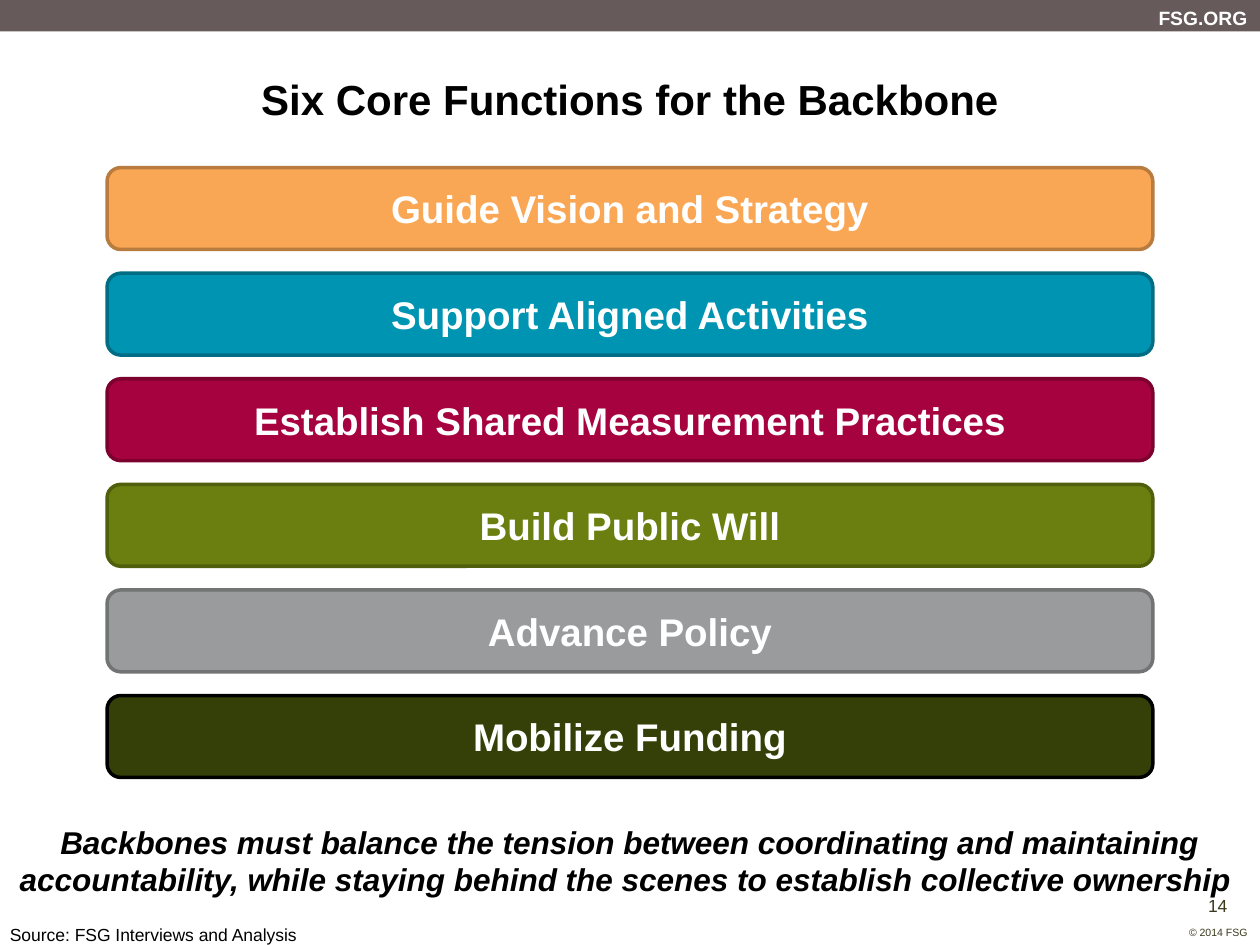
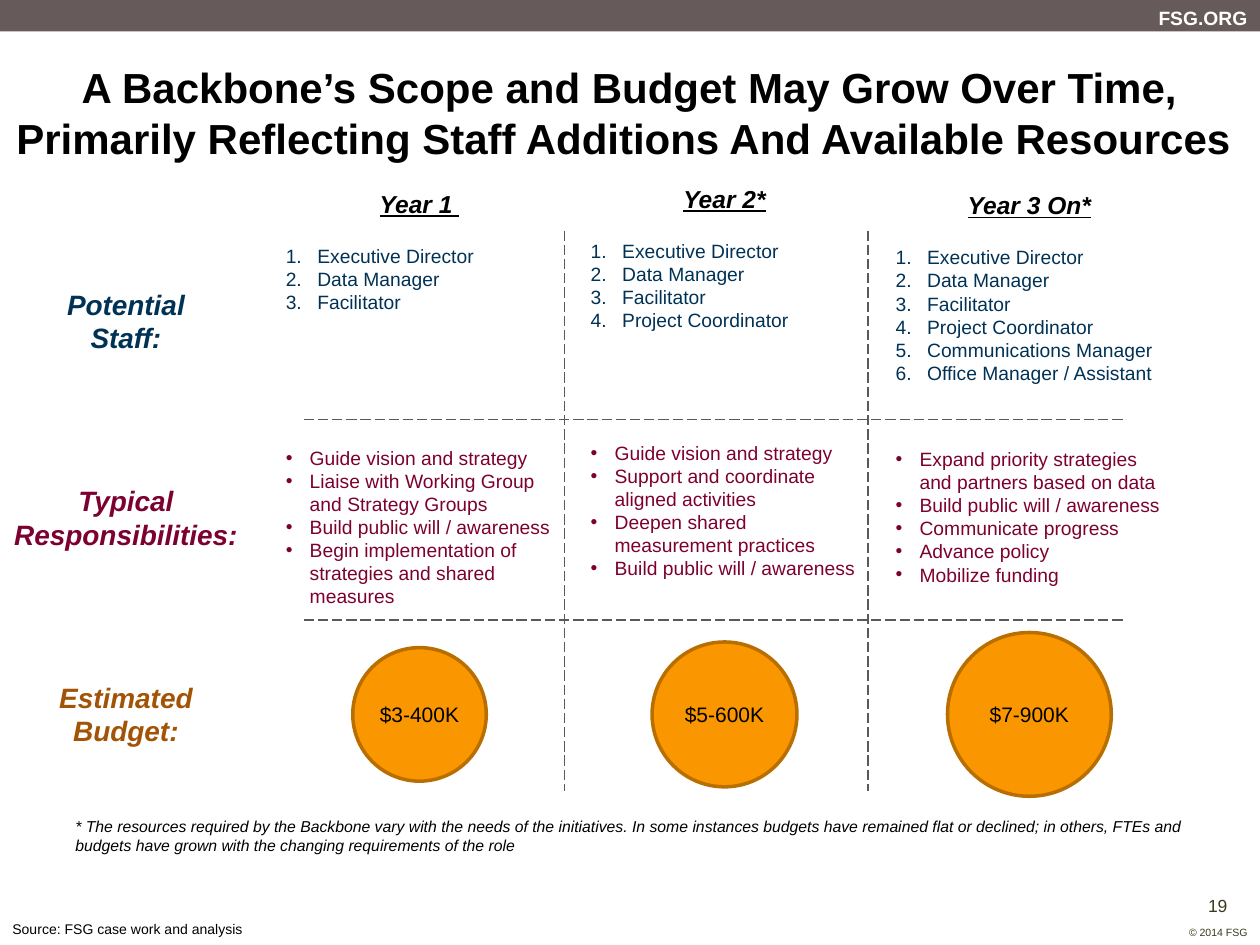
import lxml.etree
import pptx
import pptx.dml.color
import pptx.enum.dml
import pptx.enum.shapes
import pptx.enum.text
import pptx.oxml.ns
import pptx.util

Inches = pptx.util.Inches
Pt = pptx.util.Pt
RGBColor = pptx.dml.color.RGBColor
Shape = pptx.enum.shapes.MSO_SHAPE
Align = pptx.enum.text.PP_ALIGN
Anchor = pptx.enum.text.MSO_ANCHOR
AutoSize = pptx.enum.text.MSO_AUTO_SIZE
qn = pptx.oxml.ns.qn

# Shared look
FONT = "Arial"
BLACK = RGBColor(0x00, 0x00, 0x00)
WHITE = RGBColor(0xFF, 0xFF, 0xFF)
BAND = RGBColor(0x66, 0x5A, 0x5A)
FOOTER = RGBColor(0x3B, 0x39, 0x1C)
NAVY = RGBColor(0x00, 0x32, 0x56)
MAROON = RGBColor(0x7D, 0x01, 0x30)
BROWN = RGBColor(0xA3, 0x53, 0x05)
DASH = RGBColor(0x59, 0x59, 0x59)
ORANGE = RGBColor(0xFA, 0x96, 0x00)
ORANGE_EDGE = RGBColor(0xB9, 0x6F, 0x00)

# Slide 1: label, fill, edge
CORE_FUNCTIONS = [
    ("Guide Vision and Strategy", RGBColor(0xFA, 0xA7, 0x55), RGBColor(0xB9, 0x7C, 0x3F)),
    ("Support Aligned Activities", RGBColor(0x00, 0x94, 0xB3), RGBColor(0x00, 0x6D, 0x84)),
    ("Establish Shared Measurement Practices", RGBColor(0xA7, 0x02, 0x40), RGBColor(0x7C, 0x01, 0x2F)),
    ("Build Public Will", RGBColor(0x6A, 0x7F, 0x10), RGBColor(0x50, 0x5F, 0x0C)),
    ("Advance Policy", RGBColor(0x9A, 0x9B, 0x9C), RGBColor(0x72, 0x73, 0x73)),
    ("Mobilize Funding", RGBColor(0x35, 0x40, 0x08), BLACK),
]

# Slide 2: heading, vertical shift, staff, responsibilities, budget, circle diameter
STAFF = ["Executive Director", "Data Manager", "Facilitator", "Project Coordinator",
         "Communications Manager", "Office Manager / Assistant"]
YEARS = [
    ("Year 1 ", 0, STAFF[:3],
     ["Guide vision and strategy", "Liaise with Working Group and Strategy Groups",
      "Build public will / awareness",
      "Begin implementation of strategies and shared measures"],
     "$3-400K", 1.06),
    ("Year 2*", -0.04, STAFF[:4],
     ["Guide vision and strategy", "Support and coordinate aligned activities",
      "Deepen shared measurement practices", "Build public will / awareness"],
     "$5-600K", 1.15),
    ("Year 3 On*", 0.01, STAFF,
     ["Expand priority strategies and partners based on data",
      "Build public will / awareness", "Communicate progress", "Advance policy",
      "Mobilize funding"],
     "$7-900K", 1.3),
]
ROW_LABELS = [
    (["Potential", "Staff:"], NAVY),
    (["Typical", "Responsibilities:"], MAROON),
    (["Estimated", "Budget:"], BROWN),
]


def write_text(shape, lines, size, color, align=Align.LEFT, anchor=Anchor.TOP,
               margins=(0.1, 0.05), wrap=True, bold=False, italic=False,
               underline=False, bullet=None, indent=0):
    """Fill a shape with one paragraph per line; margins are horizontal, vertical."""
    frame = shape.text_frame
    frame.word_wrap = wrap
    frame.vertical_anchor = anchor
    frame.margin_left = frame.margin_right = Inches(margins[0])
    frame.margin_top = frame.margin_bottom = Inches(margins[1])
    for index, line in enumerate(lines):
        paragraph = frame.paragraphs[0] if index == 0 else frame.add_paragraph()
        paragraph.alignment = align
        if bullet:
            add_bullet(paragraph, bullet, indent)
        run = paragraph.add_run()
        run.text = line
        font = run.font
        font.name, font.size = FONT, Pt(size)
        font.bold, font.italic, font.underline = bold, italic, underline
        font.color.rgb = color


def add_bullet(paragraph, bullet, indent):
    properties = paragraph._p.get_or_add_pPr()
    properties.set("marL", str(Inches(indent)))
    properties.set("indent", str(-Inches(indent)))
    lxml.etree.SubElement(properties, qn("a:buFont")).set("typeface", FONT)
    if bullet == "number":
        lxml.etree.SubElement(properties, qn("a:buAutoNum")).set("type", "arabicPeriod")
    else:
        lxml.etree.SubElement(properties, qn("a:buChar")).set("char", bullet)


def add_text(slide, box, lines, size, color=BLACK, grow=True, **style):
    shape = slide.shapes.add_textbox(*map(Inches, box))
    write_text(shape, lines, size, color, **style)
    if grow:
        shape.text_frame.auto_size = AutoSize.SHAPE_TO_FIT_TEXT


def add_filled_shape(slide, kind, box, fill, edge=None):
    shape = slide.shapes.add_shape(kind, *map(Inches, box))
    shape.shadow.inherit = False
    shape.fill.solid()
    shape.fill.fore_color.rgb = fill
    if edge is None:
        shape.line.fill.background()
    else:
        shape.line.color.rgb = edge
        shape.line.width = Pt(2)
    return shape


def add_dashed_line(slide, start_x, start_y, end_x, end_y):
    line = slide.shapes.add_connector(
        pptx.enum.shapes.MSO_CONNECTOR.STRAIGHT,
        Inches(start_x), Inches(start_y), Inches(end_x), Inches(end_y))
    line.line.color.rgb = DASH
    line.line.width = Pt(0.75)
    line.line.dash_style = pptx.enum.dml.MSO_LINE.LONG_DASH
    lxml.etree.SubElement(line._element.spPr, qn("a:effectLst"))


def add_base_slide(presentation, number, title, title_box):
    """Blank slide with the top band, page number, copyright and title."""
    slide = presentation.slides.add_slide(presentation.slide_layouts[6])
    add_filled_shape(slide, Shape.RECTANGLE, (0, 0, 10, 0.25), BAND)
    add_text(slide, (9.09, 0, 0.91, 0.29), ["FSG.ORG"], 11, WHITE, bold=True,
             align=Align.RIGHT, anchor=Anchor.MIDDLE, wrap=False)
    add_text(slide, (9.48, 7.08, 0.37, 0.21), [number], 10, FOOTER, align=Align.CENTER,
             anchor=Anchor.MIDDLE, margins=(0.1, 0.02), wrap=False)
    add_text(slide, (9.33, 7.3, 0.67, 0.2), ["© 2014 FSG"], 6, FOOTER,
             align=Align.RIGHT, anchor=Anchor.MIDDLE, wrap=False)
    add_text(slide, title_box, [title], 24, bold=True, grow=False,
             align=Align.CENTER, anchor=Anchor.MIDDLE, margins=(0.1, 0))
    return slide


def build_functions_slide(presentation):
    slide = add_base_slide(presentation, "14", "Six Core Functions for the Backbone",
                           (0.43, 0.42, 9.14, 0.72))
    # Stack of function bars
    for index, (label, fill, edge) in enumerate(CORE_FUNCTIONS):
        bar = add_filled_shape(slide, Shape.ROUNDED_RECTANGLE,
                               (0.85, 1.33 + index * 0.838, 8.3, 0.65), fill, edge)
        write_text(bar, [label], 22, WHITE, bold=True, align=Align.CENTER,
                   anchor=Anchor.MIDDLE, margins=(0, 0))
    # Takeaway and source
    add_text(slide, (0, 6.48, 10, 0.77),
             ["Backbones must balance the tension between coordinating and maintaining "
              "accountability, while staying behind the scenes to establish collective "
              "ownership "],
             18, bold=True, italic=True, align=Align.CENTER, grow=False)
    add_text(slide, (-0.02, 7.28, 7.3, 0.27), ["Source: FSG Interviews and Analysis"], 10,
             anchor=Anchor.MIDDLE)


def build_growth_slide(presentation):
    slide = add_base_slide(
        presentation, "19",
        "A Backbone’s Scope and Budget May Grow Over Time, "
        "Primarily Reflecting Staff Additions And Available Resources ",
        (-0.03, 0.53, 10.05, 0.72))
    # Row labels
    for index, (lines, color) in enumerate(ROW_LABELS):
        add_text(slide, (0, 2.23 + index * 1.56, 2, 0.64), lines, 16, color,
                 bold=True, italic=True, align=Align.CENTER)
    # One column per year
    for index, (heading, shift, staff, duties, budget, diameter) in enumerate(YEARS):
        center = 3.33 + index * 2.42
        left = center - 1.16
        add_text(slide, (center - 1.15, 1.45 + shift, 2.3, 0.34), [heading], 14, bold=True,
                 italic=True, underline=True, align=Align.CENTER)
        add_text(slide, (left, 1.89 + shift, 2.33, 0.1 + 0.185 * len(staff)), staff, 11,
                 NAVY, bullet="number", indent=0.25)
        add_text(slide, (left, 3.49 + shift, 2.33, 1.21), duties, 11, MAROON,
                 bullet="•", indent=0.19)
        circle = add_filled_shape(
            slide, Shape.OVAL,
            (center - diameter / 2, 5.67 - diameter / 2, diameter, diameter),
            ORANGE, ORANGE_EDGE)
        write_text(circle, [budget], 12, BLACK, align=Align.CENTER, anchor=Anchor.MIDDLE,
                   margins=(0, 0), wrap=False)
    # Grid lines
    for x in (4.48, 6.89):
        add_dashed_line(slide, x, 1.83, x, 6.28)
    for y in (3.33, 4.92):
        add_dashed_line(slide, 2.41, y, 8.91, y)
    # Footnote and source
    add_text(slide, (0.5, 6.43, 9, 0.4),
             ["* The resources required by the Backbone vary with the needs of the "
              "initiatives. In some instances budgets have remained flat or declined; in "
              "others, FTEs and budgets have grown with the changing requirements of the role"],
             9, italic=True)
    add_text(slide, (0, 7.26, 9.33, 0.24), ["Source: FSG case work and analysis"], 8)


def main():
    presentation = pptx.Presentation()
    presentation.slide_width = Inches(10)
    presentation.slide_height = Inches(7.5)
    build_functions_slide(presentation)
    build_growth_slide(presentation)
    presentation.save("out.pptx")


if __name__ == "__main__":
    main()
